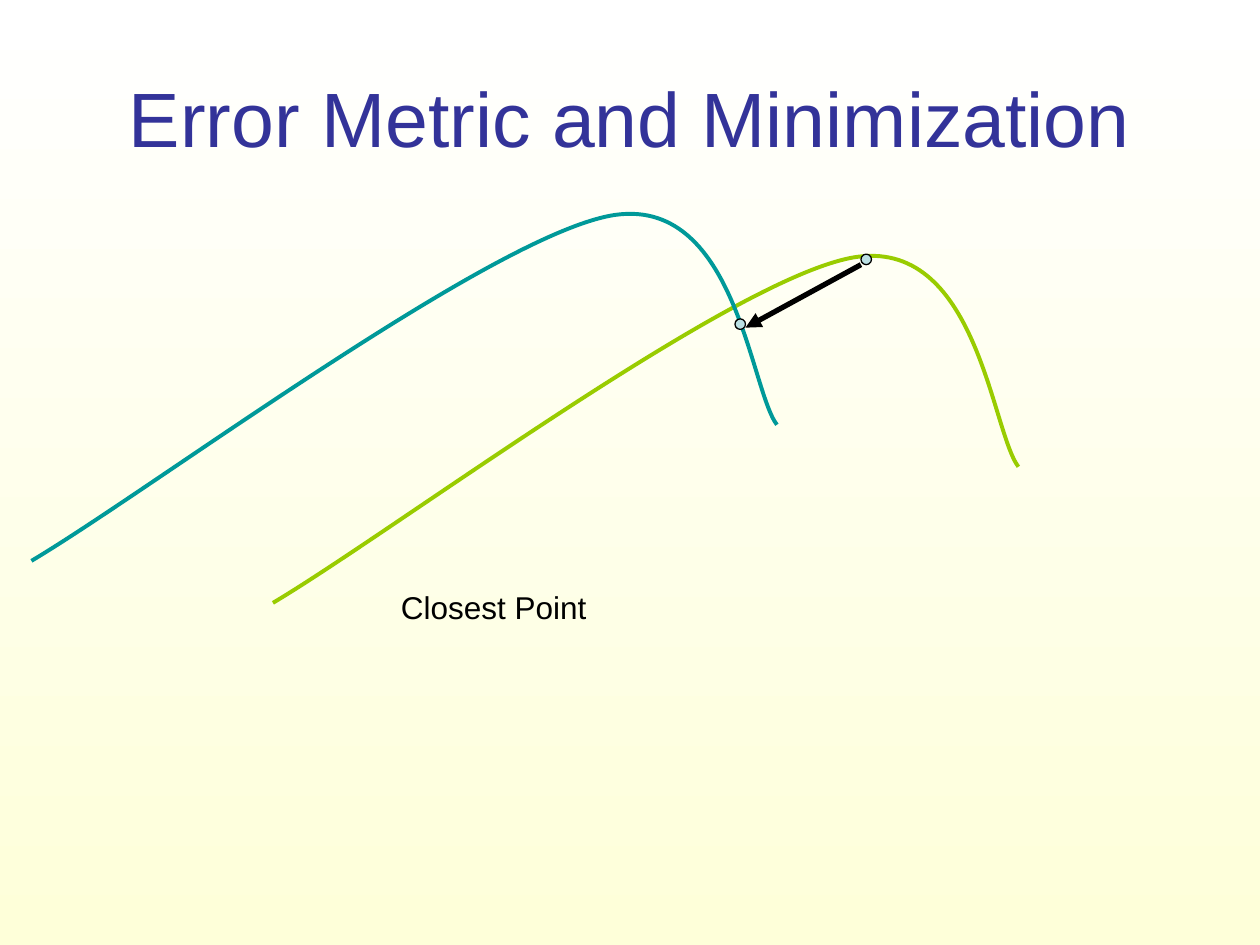
from typing import NamedTuple

import pptx
import pptx.dml.color
import pptx.enum.shapes
import pptx.enum.text
import pptx.oxml
import pptx.oxml.ns
import pptx.util
from pptx.dml.color import RGBColor
from pptx.util import Pt

WHITE = RGBColor(0xFF, 0xFF, 0xFF)
CREAM = RGBColor(0xFE, 0xFF, 0xD9)
INDIGO = RGBColor(0x33, 0x33, 0x99)
LIME = RGBColor(0x99, 0xCC, 0x00)
TEAL = RGBColor(0x00, 0x99, 0x99)
PALE_BLUE = RGBColor(0xBB, 0xE0, 0xE3)
BLACK = RGBColor(0, 0, 0)

FONT = "Arial"
MARKER_SIZE = 6


class Point(NamedTuple):
    x: float
    y: float


class Curve(NamedTuple):
    offset: Point
    color: RGBColor


class Label(NamedTuple):
    text: str
    left: float
    top: float
    width: float
    height: float
    size: float
    color: RGBColor
    align: pptx.enum.text.PP_ALIGN
    anchor: pptx.enum.text.MSO_ANCHOR
    fit: pptx.enum.text.MSO_AUTO_SIZE


# Both scans share one profile: a start, then three points per cubic segment
PROFILE = [
    Point(444, 242.75),
    Point(428.5, 222.5), Point(420.5, 110.25), Point(349, 123.25),
    Point(278, 136.5), Point(87, 279.5), Point(18, 320.5),
]
SOURCE_SCAN = Curve(Point(138, 24), LIME)
TARGET_SCAN = Curve(Point(0, 0), TEAL)
SOURCE_MARKER = Point(492, 145.25)
TARGET_MARKER = Point(420, 182.25)

TITLE = Label("Error Metric and Minimization", 36, 21.6, 648, 90, 44, INDIGO,
              pptx.enum.text.PP_ALIGN.CENTER, pptx.enum.text.MSO_ANCHOR.MIDDLE,
              pptx.enum.text.MSO_AUTO_SIZE.NONE)
METRIC_NAME = Label("Closest Point", 222, 332.25, 228, 36, 18, BLACK,
                    pptx.enum.text.PP_ALIGN.LEFT, pptx.enum.text.MSO_ANCHOR.TOP,
                    pptx.enum.text.MSO_AUTO_SIZE.SHAPE_TO_FIT_TEXT)


def draw_label(slide, label: Label) -> None:
    box = slide.shapes.add_textbox(Pt(label.left), Pt(label.top),
                                   Pt(label.width), Pt(label.height))
    frame = box.text_frame
    frame.word_wrap = True
    frame.auto_size = label.fit
    frame.vertical_anchor = label.anchor
    paragraph = frame.paragraphs[0]
    paragraph.alignment = label.align
    run = paragraph.add_run()
    run.text = label.text
    run.font.name = FONT
    run.font.size = Pt(label.size)
    run.font.color.rgb = label.color


def bend_segments(outline) -> None:
    """Turn every three straight segments into one cubic Bezier segment."""
    lines = outline._element.findall(".//" + pptx.oxml.ns.qn("a:lnTo"))
    for first in range(0, len(lines), 3):
        cubic = pptx.oxml.parse_xml(
            f'<a:cubicBezTo {pptx.oxml.ns.nsdecls("a")}/>')
        lines[first].addprevious(cubic)
        for line in lines[first:first + 3]:
            cubic.append(line[0])
            line.getparent().remove(line)


def draw_curve(slide, curve: Curve) -> None:
    vertices = [(Pt(p.x + curve.offset.x), Pt(p.y + curve.offset.y)) for p in PROFILE]
    builder = slide.shapes.build_freeform(*vertices[0])
    builder.add_line_segments(vertices[1:], close=False)
    outline = builder.convert_to_shape()
    bend_segments(outline)
    outline.shadow.inherit = False
    outline.fill.background()
    outline.line.color.rgb = curve.color
    outline.line.width = Pt(2.25)


def draw_marker(slide, corner: Point) -> None:
    marker = slide.shapes.add_shape(pptx.enum.shapes.MSO_SHAPE.OVAL, Pt(corner.x),
                                    Pt(corner.y), Pt(MARKER_SIZE), Pt(MARKER_SIZE))
    marker.shadow.inherit = False
    marker.fill.solid()
    marker.fill.fore_color.rgb = PALE_BLUE
    marker.line.color.rgb = BLACK
    marker.line.width = Pt(0.75)


def draw_arrow(slide, start: Point, end: Point) -> None:
    arrow = slide.shapes.add_connector(pptx.enum.shapes.MSO_CONNECTOR.STRAIGHT,
                                       Pt(start.x), Pt(start.y), Pt(end.x), Pt(end.y))
    arrow.line.color.rgb = BLACK
    arrow.line.width = Pt(3)
    namespace = pptx.oxml.ns.nsdecls("a")
    arrow.line._get_or_add_ln().append(
        pptx.oxml.parse_xml(f'<a:tailEnd {namespace} type="triangle"/>'))
    arrow._element.spPr.append(pptx.oxml.parse_xml(f"<a:effectLst {namespace}/>"))


def main() -> None:
    deck = pptx.Presentation()
    deck.slide_width, deck.slide_height = Pt(720), Pt(540)
    slide = deck.slides.add_slide(deck.slide_layouts[6])

    # Background: white at the top to cream at the bottom
    backdrop = slide.background.fill
    backdrop.gradient()
    backdrop.gradient_angle = 270
    for stop, color in zip(backdrop.gradient_stops, (WHITE, CREAM)):
        stop.color.rgb = color

    draw_label(slide, TITLE)

    # Scans to be aligned
    for scan in (SOURCE_SCAN, TARGET_SCAN):
        draw_curve(slide, scan)

    # Matched pair of points
    draw_marker(slide, SOURCE_MARKER)
    draw_arrow(slide, Point(492, 151.25), Point(426, 187.25))
    draw_label(slide, METRIC_NAME)
    draw_marker(slide, TARGET_MARKER)

    deck.save("out.pptx")


if __name__ == "__main__":
    main()
